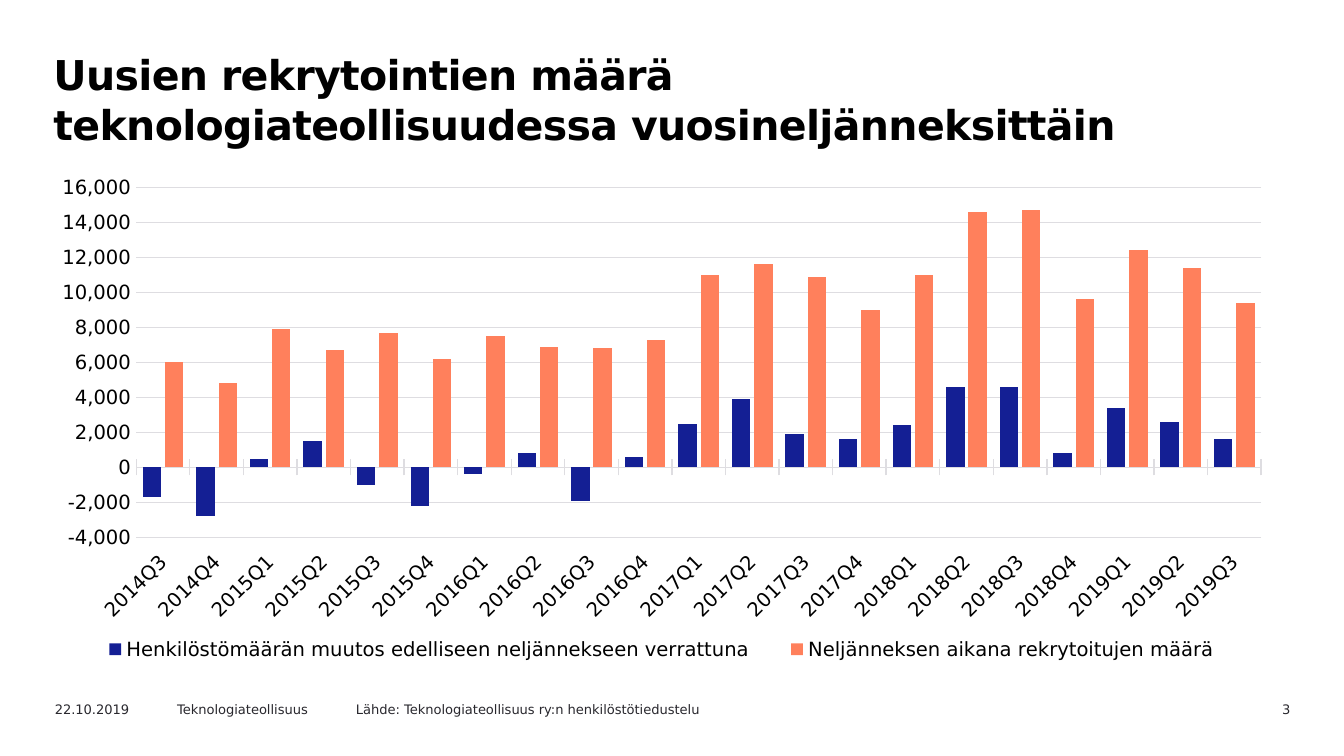
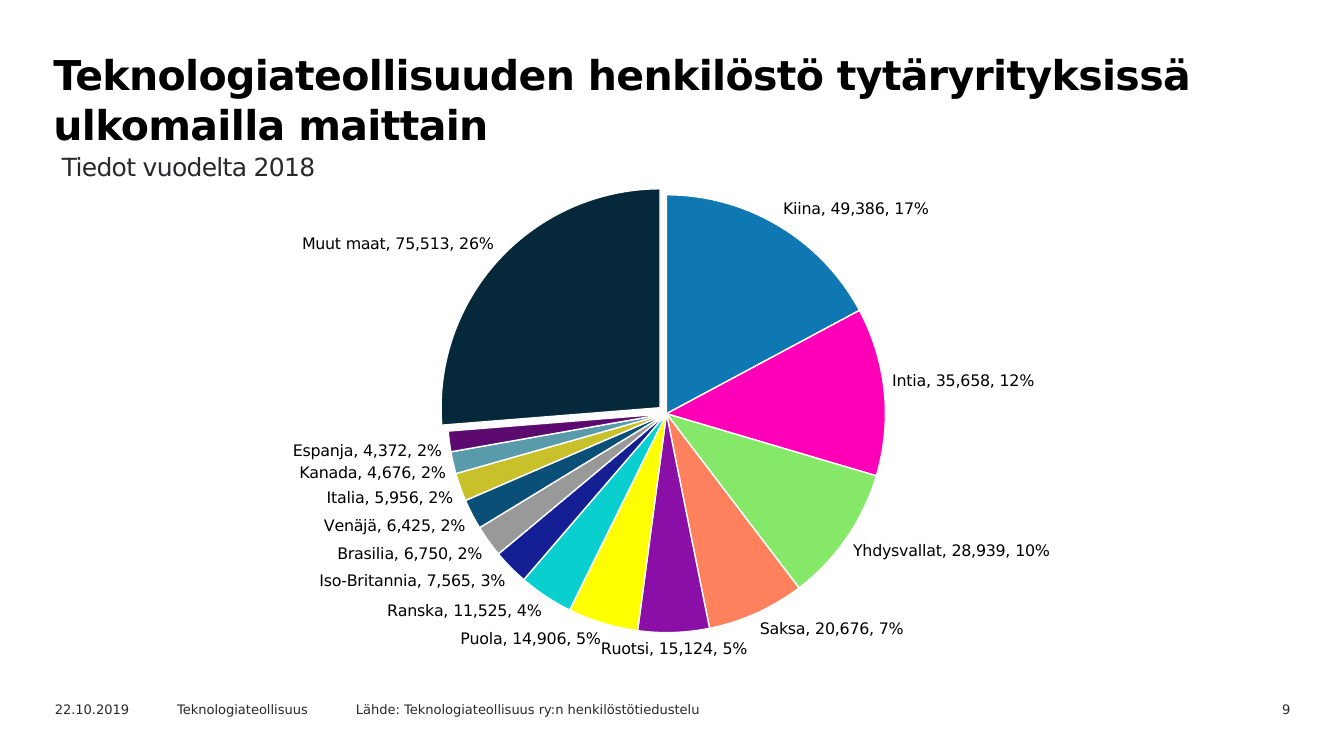
from dataclasses import dataclass

from lxml.etree import SubElement
from pptx import Presentation
from pptx.chart.data import CategoryChartData
from pptx.dml.color import RGBColor
from pptx.enum.chart import XL_CHART_TYPE as ChartType
from pptx.enum.chart import XL_LABEL_POSITION as LabelPosition
from pptx.enum.chart import XL_LEGEND_POSITION as LegendPosition
from pptx.enum.chart import XL_TICK_LABEL_POSITION as TickLabelPosition
from pptx.enum.chart import XL_TICK_MARK as TickMark
from pptx.enum.text import PP_ALIGN as Align
from pptx.oxml.ns import qn
from pptx.util import Inches, Pt


@dataclass(frozen=True)
class Theme:
    font: str = "DejaVu Sans"
    black: str = "000000"
    gray: str = "29282E"
    grid: str = "DEDDE1"
    white: str = "FFFFFF"
    navy: str = "141F94"
    coral: str = "FF805C"
    title_size: float = 22
    title_leading: float = 27
    subtitle_size: float = 13.4
    footer_size: float = 7
    axis_size: float = 10.5
    label_size: float = 8.5


THEME = Theme()
DATE = "22.10.2019"
PUBLISHER = "Teknologiateollisuus"
SOURCE = "Lähde: Teknologiateollisuus ry:n henkilöstötiedustelu"
NUMBER_FORMAT = "#,##0"

QUARTERS = [f"{2014 + index // 4}Q{index % 4 + 1}" for index in range(2, 23)]
STAFF_CHANGES = [
    -1700, -2800, 500, 1500, -1000, -2200, -400, 800, -1900, 600, 2500,
    3900, 1900, 1600, 2400, 4600, 4600, 800, 3400, 2600, 1600,
]
RECRUITMENTS = [
    6000, 4800, 7900, 6700, 7700, 6200, 7500, 6900, 6800, 7300, 11000,
    11600, 10900, 9000, 11000, 14600, 14700, 9600, 12400, 11400, 9400,
]
COUNTRIES = [
    ("Kiina", 49386, "0F78B2"),
    ("Intia", 35658, "FF00B8"),
    ("Yhdysvallat", 28939, "85E869"),
    ("Saksa", 20676, THEME.coral),
    ("Ruotsi", 15124, "8A0FA6"),
    ("Puola", 14906, "FFFF00"),
    ("Ranska", 11525, "0ACFCF"),
    ("Iso-Britannia", 7565, THEME.navy),
    ("Brasilia", 6750, "999999"),
    ("Venäjä", 6425, "0A4F77"),
    ("Italia", 5956, "C8C12C"),
    ("Kanada", 4676, "599BAA"),
    ("Espanja", 4372, "5C0A6F"),
    ("Muut maat", 75513, "05283B"),
]


def color(code):
    return RGBColor.from_string(code)


def style_font(font, size, code, bold=False):
    font.name = THEME.font
    font.size = Pt(size)
    font.bold = bold
    font.color.rgb = color(code)


def style_line(line, code, width=0.75):
    line.color.rgb = color(code)
    line.width = Pt(width)


def fill_text(box, text, size, code=THEME.gray, bold=False, align=Align.LEFT,
              leading=None, spacing=None, indent=0):
    para = box.text_frame.paragraphs[0]
    para.alignment = align
    if leading:
        para.line_spacing = Pt(leading)
    if indent:
        para._p.get_or_add_pPr().set("marL", str(Inches(indent)))
    span = para.add_run()
    span.text = text
    style_font(span.font, size, code, bold)
    if spacing:
        span._r.get_or_add_rPr().set("spc", str(round(spacing * 100)))


def place(element, position, left, top, width, height, target=None):
    for layout in element.findall(qn("c:layout")):
        element.remove(layout)
    layout = SubElement(element, qn("c:layout"))
    element.insert(position, layout)
    manual = SubElement(layout, qn("c:manualLayout"))
    settings = {"layoutTarget": target, "xMode": "edge", "yMode": "edge",
                "x": left, "y": top, "w": width, "h": height}
    for name, value in settings.items():
        if value is not None:
            SubElement(manual, qn(f"c:{name}")).set("val", str(value))


def place_plot(chart, *bounds):
    area = chart._chartSpace.find(".//" + qn("c:plotArea"))
    place(area, 0, *bounds, target="inner")


class SlideBuilder:
    def __init__(self, deck):
        self.deck = deck
        self.page = None

    def start(self, title, number):
        self.page = self.deck.slides.add_slide(self.deck.slide_layouts[6])
        self.page.background.fill.solid()
        self.page.background.fill.fore_color.rgb = color(THEME.white)
        self.text(title, 0.28, 0.31, 8.74, 0.71, size=THEME.title_size,
                  code=THEME.black, bold=True, leading=THEME.title_leading,
                  spacing=-0.35, indent=0.02)
        self.footer(str(number), 8.76, 0.94, align=Align.RIGHT)
        self.footer(DATE, 0.31, 1)
        self.footer(PUBLISHER, 1.22, 1.42)
        self.footer(SOURCE, 2.55, 3.25)

    def text(self, text, left, top, width, height, inset=(0.1, 0.05), **style):
        box = self.page.shapes.add_textbox(
            Inches(left), Inches(top), Inches(width), Inches(height))
        frame = box.text_frame
        frame.word_wrap = True
        frame.margin_left = frame.margin_right = Inches(inset[0])
        frame.margin_top = frame.margin_bottom = Inches(inset[1])
        fill_text(box, text, **style)

    def footer(self, text, left, width, align=Align.LEFT):
        self.text(text, left, 5.17, width, 0.18, size=THEME.footer_size, align=align)

    def chart(self, kind, categories, series, left, top, width, height, size):
        data = CategoryChartData(number_format=NUMBER_FORMAT)
        data.categories = categories
        for name, values in series:
            data.add_series(name, values)
        chart = self.page.shapes.add_chart(
            kind, Inches(left), Inches(top), Inches(width), Inches(height), data).chart
        chart.has_title = False
        chart.has_legend = False
        style_font(chart.font, size, THEME.gray)
        return chart

    def columns(self, categories, series, colors, left, top, width, height):
        chart = self.chart(ChartType.COLUMN_CLUSTERED, categories, series,
                           left, top, width, height, size=10)
        place_plot(chart, 0.079, 0.041, 0.901, 0.689)
        plot = chart.plots[0]
        plot.gap_width = 70
        plot.overlap = -21
        plot.vary_by_categories = False
        for bars, code in zip(plot.series, colors):
            bars.invert_if_negative = False
            bars.format.fill.solid()
            bars.format.fill.fore_color.rgb = color(code)

        quarters, amounts = chart.category_axis, chart.value_axis
        for axis in (quarters, amounts):
            style_font(axis.tick_labels.font, THEME.axis_size, THEME.black)
            axis.minor_tick_mark = TickMark.NONE
        quarters.major_tick_mark = TickMark.CROSS
        quarters.tick_label_position = TickLabelPosition.LOW
        style_line(quarters.format.line, THEME.grid)
        quarters._element.find(".//" + qn("a:bodyPr")).set("rot", "-2700000")

        amounts.minimum_scale, amounts.maximum_scale = -4000, 16000
        amounts.major_unit = 2000
        amounts.major_tick_mark = TickMark.NONE
        amounts.format.line.fill.background()
        amounts.tick_labels.number_format = NUMBER_FORMAT
        amounts.tick_labels.number_format_is_linked = False
        style_line(amounts.major_gridlines.format.line, THEME.grid)

        chart.has_legend = True
        chart.legend.position = LegendPosition.BOTTOM
        chart.legend.include_in_layout = False
        style_font(chart.legend.font, THEME.axis_size, THEME.black)
        place(chart.legend._element, 1, 0.03, 0.92, 0.94, 0.06)

    def pie(self, slices, left, top, width, height):
        names, values, colors = zip(*slices)
        chart = self.chart(ChartType.PIE, names, [("Series 1", values)],
                           left, top, width, height, size=18)
        place_plot(chart, 0.317, 0.062, 0.355, 0.842)
        plot = chart.plots[0]
        for index, code in enumerate(colors):
            point = plot.series[0].points[index]
            point.format.fill.solid()
            point.format.fill.fore_color.rgb = color(code)
            style_line(point.format.line, THEME.white)
        last = plot.series[0]._element.findall(qn("c:dPt"))[-1]
        explosion = SubElement(last, qn("c:explosion"))
        explosion.set("val", "4")
        last.find(qn("c:spPr")).addprevious(explosion)

        labels = plot.series[0].data_labels
        labels.show_category_name = True
        labels.show_value = True
        labels.show_percentage = True
        labels.number_format = "0%"
        labels.number_format_is_linked = True
        labels.position = LabelPosition.OUTSIDE_END
        style_font(labels.font, THEME.label_size, THEME.black)
        separator = SubElement(labels._element, qn("c:separator"))
        separator.text = ", "
        labels._element.find(qn("c:showBubbleSize")).addnext(separator)


def main():
    deck = Presentation()
    deck.slide_width = Inches(10)
    deck.slide_height = deck.slide_width * 9 // 16
    builder = SlideBuilder(deck)

    builder.start("Uusien rekrytointien määrä teknologiateollisuudessa "
                  "vuosineljänneksittäin", 3)
    builder.columns(
        QUARTERS,
        [("Henkilöstömäärän muutos edelliseen neljännekseen verrattuna", STAFF_CHANGES),
         ("Neljänneksen aikana rekrytoitujen määrä", RECRUITMENTS)],
        [THEME.navy, THEME.coral], 0.28, 1.24, 9.29, 3.78)

    builder.start("Teknologiateollisuuden henkilöstö tytäryrityksissä "
                  "ulkomailla maittain", 9)
    builder.pie(COUNTRIES, 0.42, 1.21, 9.18, 3.87)
    builder.text("Tiedot vuodelta 2018", 0.42, 1.09, 2.13, 0.31, inset=(0.04, 0.04),
                 size=THEME.subtitle_size, spacing=-0.4)
    deck.save("out.pptx")


if __name__ == "__main__":
    main()
